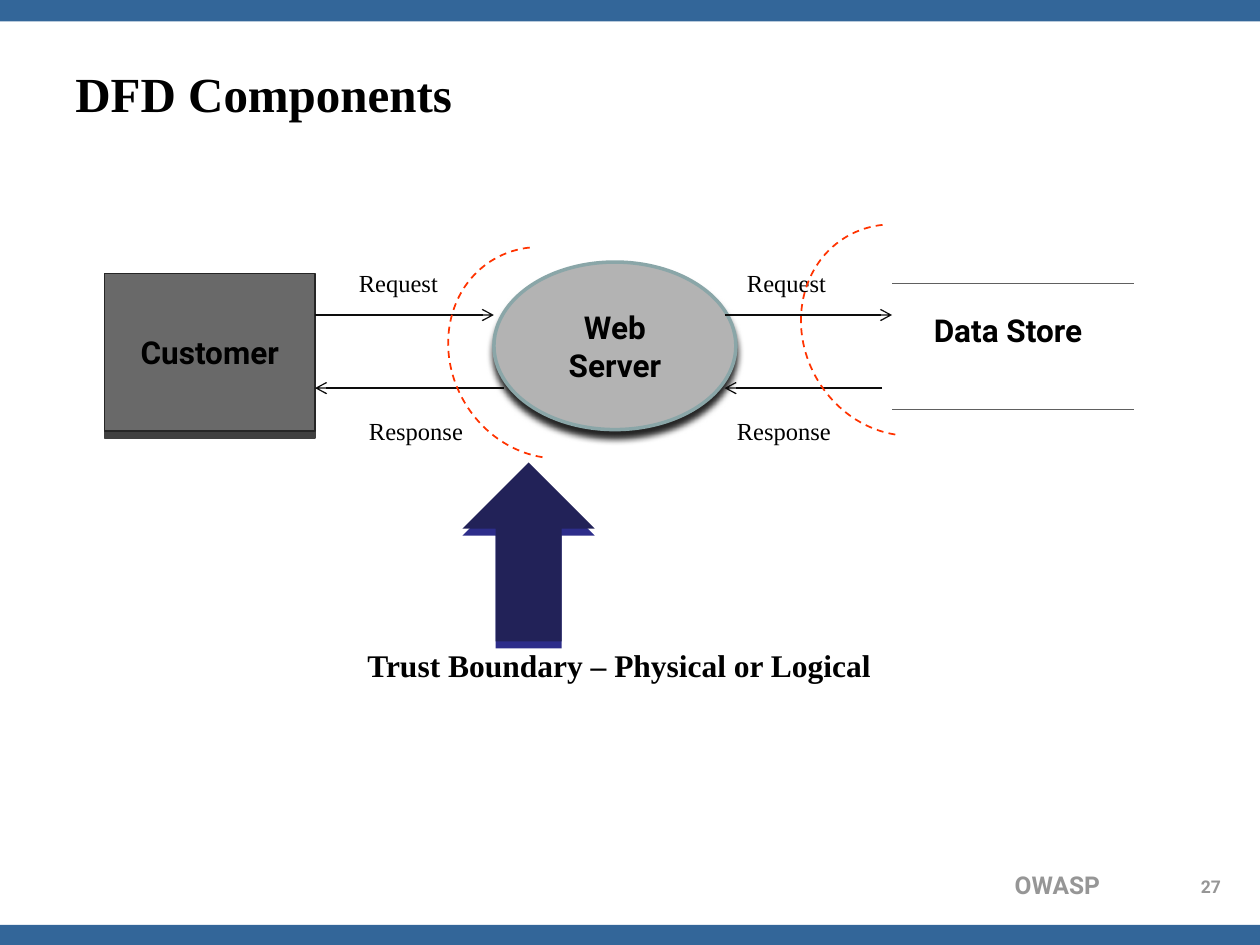
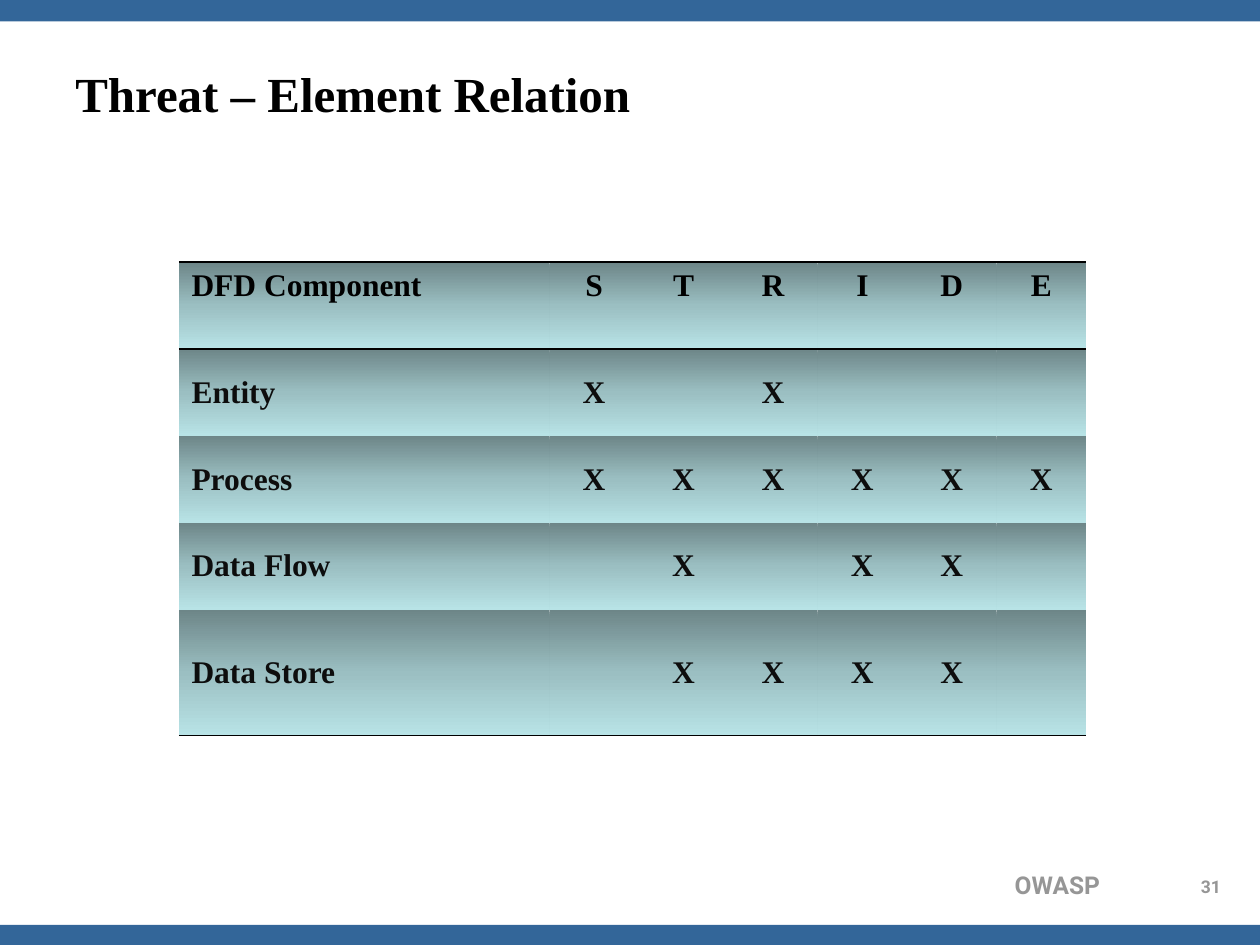
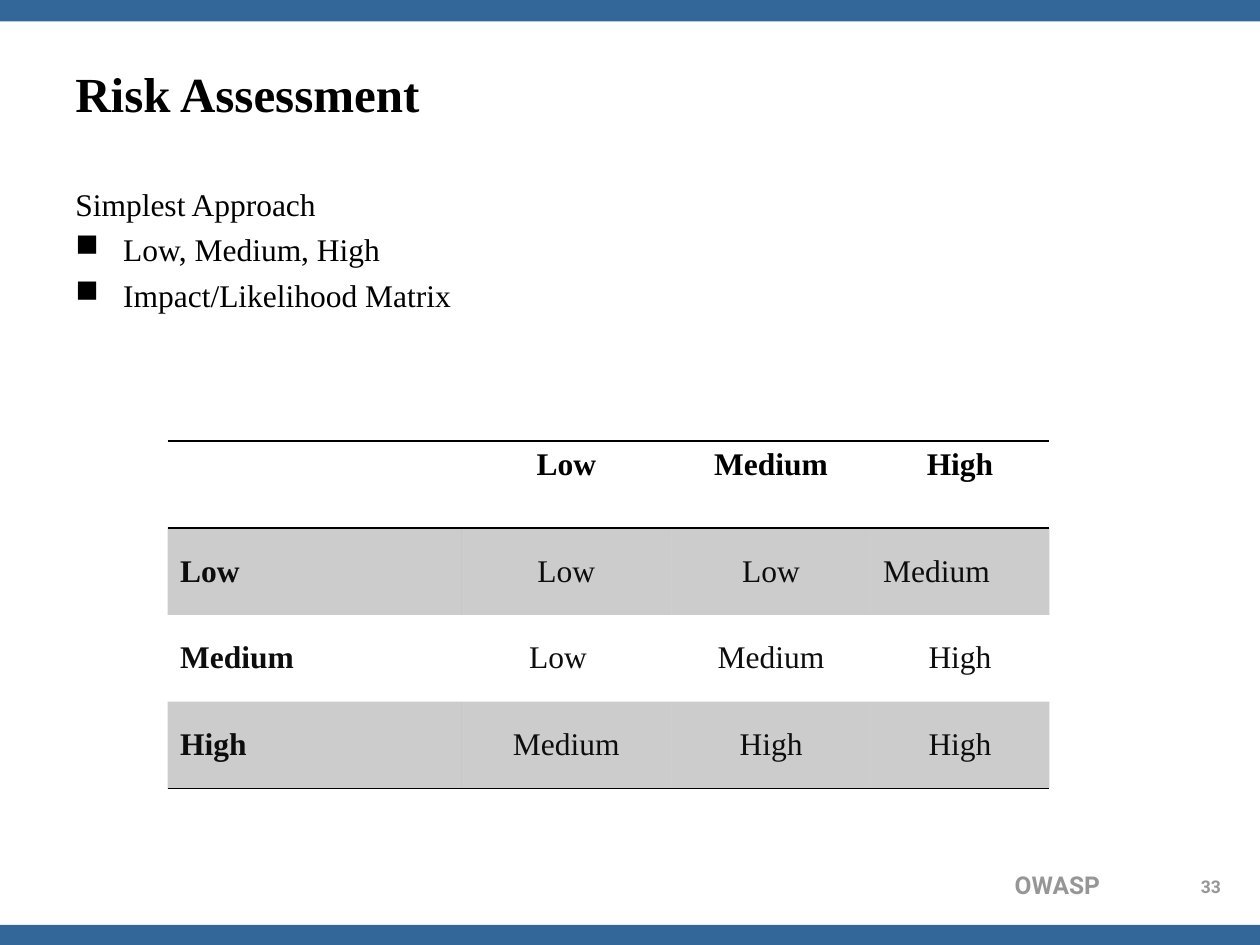
from pptx import Presentation
from pptx.dml.color import RGBColor
from pptx.enum.dml import MSO_LINE
from pptx.enum.shapes import MSO_CONNECTOR, MSO_SHAPE
from pptx.enum.text import MSO_ANCHOR, PP_ALIGN
from pptx.oxml import parse_xml
from pptx.util import Inches, Pt

SERIF, SANS = "Times New Roman", "Roboto"
BLACK = RGBColor(0x00, 0x00, 0x00)
INK = RGBColor(0x0D, 0x0D, 0x0D)
BAND = RGBColor(0x33, 0x66, 0x99)
FOOTER = RGBColor(0x96, 0x96, 0x96)
ENTITY = RGBColor(0x69, 0x69, 0x69)
ENTITY_EDGE = RGBColor(0x26, 0x26, 0x26)
ENTITY_SHADOW = RGBColor(0x40, 0x40, 0x40)
PROCESS = RGBColor(0xB3, 0xB3, 0xB3)
PROCESS_EDGE = RGBColor(0x8A, 0xA6, 0xA8)
STORE_LINE = RGBColor(0x60, 0x60, 0x60)
BOUNDARY = RGBColor(0xFF, 0x33, 0x00)
POINTER = RGBColor(0x22, 0x22, 0x58)
POINTER_SHADOW = RGBColor(0x2D, 0x2D, 0x8A)

LEFT, CENTER, RIGHT = PP_ALIGN.LEFT, PP_ALIGN.CENTER, PP_ALIGN.RIGHT
NS = 'xmlns:a="http://schemas.openxmlformats.org/drawingml/2006/main"'
NO_TABLE_STYLE = "{2D5ABB26-0587-4C30-8999-92F81FD0307C}"
STOPS = ((0, "6D8688"), (50, "9BBFC2"), (100, "B8E3E6"))
GRADIENT = (
    f"<a:gradFill {NS}><a:gsLst>"
    + "".join(f'<a:gs pos="{pos * 1000}"><a:srgbClr val="{color}"/></a:gs>' for pos, color in STOPS)
    + '</a:gsLst><a:lin ang="5400000" scaled="0"/></a:gradFill>'
)
GRAY = f'<a:solidFill {NS}><a:srgbClr val="000000"><a:alpha val="20000"/></a:srgbClr></a:solidFill>'
CLEAR = f"<a:noFill {NS}/>"

# from x, from y, to x, to y
FLOWS = [
    (2.5, 2.5, 3.92, 2.5),
    (4, 3.08, 2.5, 3.08),
    (5.75, 2.5, 7.08, 2.5),
    (7, 3.08, 5.75, 3.08),
]
FLOW_LABELS = [
    ("Request", 2.75, 2.08),
    ("Request", 5.83, 2.08),
    ("Response", 2.83, 3.25),
    ("Response", 5.75, 3.25),
]
BOUNDARIES = [(6.38, 1.76), (3.58, 1.94)]

THREATS = "STRIDE"
ELEMENTS = [("Entity", "SR"), ("Process", "STRIDE"), ("Data Flow", "TID"), ("Data Store", "TRID")]

APPROACH = ["Simplest Approach", "Low, Medium, High", "Impact/Likelihood Matrix"]
RISKS = [
    ["", "Low", "Medium", "High"],
    ["Low", "Low", "Low", "Medium"],
    ["Medium", "Low", "Medium", "High"],
    ["High", "Medium", "High", "High"],
]


def style(p, size, color=BLACK, font=SERIF, bold=False, align=LEFT):
    p.alignment = align
    for r in p.runs:
        f = r.font
        f.size, f.name, f.bold, f.color.rgb = Pt(size), font, bold, color


def add_text(s, content, at, size, anchor=MSO_ANCHOR.TOP, **look):
    tf = s.shapes.add_textbox(*map(Inches, at)).text_frame
    tf.word_wrap = True
    tf.vertical_anchor = anchor
    tf.text = content
    style(tf.paragraphs[0], size, **look)
    return tf


def add_shape(s, kind, at, fill=None, line=None, width=2):
    sp = s.shapes.add_shape(kind, *map(Inches, at))
    sp.shadow.inherit = False
    if fill is None:
        sp.fill.background()
    else:
        sp.fill.solid()
        sp.fill.fore_color.rgb = fill
    if line is None:
        sp.line.fill.background()
    else:
        sp.line.color.rgb = line
        sp.line.width = Pt(width)
    return sp


def drop_shadow(sp, color, blur=0):
    effects = sp._element.spPr.find("{*}effectLst")
    effects.append(parse_xml(
        f'<a:outerShdw {NS} blurRad="{Pt(blur)}" dist="{Pt(4)}" dir="5400000" rotWithShape="0">'
        f'<a:srgbClr val="{color}"/></a:outerShdw>'))


def label_shape(sp, content):
    tf = sp.text_frame
    tf.word_wrap = True
    tf.vertical_anchor = MSO_ANCHOR.MIDDLE
    tf.text = content
    style(tf.paragraphs[0], 18, font=SANS, bold=True, align=CENTER)


def add_line(s, ends, color, arrow=False):
    c = s.shapes.add_connector(MSO_CONNECTOR.STRAIGHT, *map(Inches, ends))
    c.line.color.rgb = color
    c.line.width = Pt(0.75)
    if arrow:
        c.line._get_or_add_ln().append(parse_xml(f'<a:tailEnd {NS} type="arrow"/>'))
    c._element.spPr.append(parse_xml(f"<a:effectLst {NS}/>"))


def add_slide(prs, title, number):
    s = prs.slides.add_slide(prs.slide_layouts[6])
    for top in (0, 7.34):
        add_shape(s, MSO_SHAPE.RECTANGLE, (0, top, 10, 0.17), BAND)
    add_text(s, "OWASP", (6.22, 6.86, 2.61, 0.33), 14, color=FOOTER, font=SANS, bold=True, align=RIGHT)
    add_text(s, str(number), (9.39, 6.9, 0.44, 0.25), 10, color=FOOTER, font=SANS, bold=True, align=CENTER)
    add_text(s, title, (0.5, 0.3, 9, 0.87), 28, anchor=MSO_ANCHOR.MIDDLE, bold=True)
    return s


def add_grid(s, rows, at, widths, heights, fills, bold_body):
    """Table ruled above and below its header row and below its last row."""
    frame = s.shapes.add_table(len(rows), len(widths), *map(Inches, (*at, sum(widths), sum(heights))))
    table = frame.table
    table._tbl.tblPr.find("{*}tableStyleId").text = NO_TABLE_STYLE
    for column, width in zip(table.columns, widths):
        column.width = Inches(width)
    for i, row in enumerate(rows):
        table.rows[i].height = Inches(heights[i])
        edges = {0: ("lnT", "lnB"), len(rows) - 1: ("lnB",)}.get(i, ())
        for j, content in enumerate(row):
            cell = table.cell(i, j)
            cell.vertical_anchor = MSO_ANCHOR.MIDDLE if i else MSO_ANCHOR.TOP
            cell.text = content
            style(cell.text_frame.paragraphs[0], 18, color=INK if i else BLACK,
                  bold=bold_body or i == 0 or j == 0, align=CENTER if j else LEFT)
            tcPr = cell._tc.get_or_add_tcPr()
            for edge in edges:
                tcPr.append(parse_xml(
                    f'<a:{edge} {NS} w="{Pt(1)}"><a:solidFill><a:srgbClr val="{BLACK}"/></a:solidFill></a:{edge}>'))
            tcPr.append(parse_xml(fills[i]))
    return table


def build_components(prs):
    s = add_slide(prs, "DFD Components", 27)
    customer = add_shape(s, MSO_SHAPE.RECTANGLE, (0.83, 2.17, 1.67, 1.25), ENTITY, ENTITY_EDGE, 1)
    drop_shadow(customer, ENTITY_SHADOW)
    label_shape(customer, "Customer")
    server = add_shape(s, MSO_SHAPE.OVAL, (3.92, 2.08, 1.92, 1.33), PROCESS, PROCESS_EDGE)
    drop_shadow(server, ENTITY_EDGE, blur=4)
    label_shape(server, "Web Server")

    for y in (2.25, 3.25):
        add_line(s, (7.08, y, 9, y), STORE_LINE)
    add_text(s, "Data Store", (7, 2.42, 2, 0.4), 18, font=SANS, bold=True, align=CENTER)

    for ends in FLOWS:
        add_line(s, ends, INK, arrow=True)
    for label, x, y in FLOW_LABELS:
        add_text(s, label, (x, y, 1.17, 0.34), 14)
    for x, y in BOUNDARIES:
        arc = add_shape(s, MSO_SHAPE.ARC, (x, y, 1.55, 1.72), line=BOUNDARY, width=1)
        arc.line.dash_style = MSO_LINE.DASH
        arc.adjustments[0], arc.adjustments[1] = 74.27, 174.63
        arc.rotation = 329.6

    add_text(s, "Trust Boundary – Physical or Logical", (0.83, 5.08, 8.17, 0.4), 18, bold=True, align=CENTER)
    pointer = add_shape(s, MSO_SHAPE.DOWN_ARROW, (3.67, 3.67, 1.05, 1.42), POINTER)
    pointer.rotation = 180
    drop_shadow(pointer, POINTER_SHADOW)


def build_threats(prs):
    s = add_slide(prs, "Threat – Element Relation", 31)
    rows = [["DFD Component", *THREATS]]
    rows += [[name, *("X" if t in found else "" for t in THREATS)] for name, found in ELEMENTS]
    add_grid(s, rows, (1.42, 2.08), [2.94] + [0.71] * len(THREATS), [0.69] * 4 + [1],
             [GRADIENT] * len(rows), bold_body=True)


def build_risks(prs):
    s = add_slide(prs, "Risk Assessment", 33)
    tf = add_text(s, APPROACH[0], (0.5, 1.42, 9, 1.3), 18)
    for item in APPROACH[1:]:
        p = tf.add_paragraph()
        p.text = item
        p.space_before = Pt(4.3)
        p._p.get_or_add_pPr().append(parse_xml(f'<a:buChar {NS} char="■"/>'))
        style(p, 18)
    for p in tf.paragraphs:
        pPr = p._p.get_or_add_pPr()
        pPr.set("marL", str(Inches(0.38)))
        pPr.set("indent", str(-Inches(0.38)))

    table = add_grid(s, RISKS, (1.33, 3.5), [2.33, 1.67, 1.58, 1.42], [0.69] * 4,
                     [CLEAR, GRAY, CLEAR, GRAY], bold_body=False)
    for i, j, margin in ((1, 3, 0.1), (2, 1, 0.54)):
        cell = table.cell(i, j)
        cell.margin_left = Inches(margin)
        cell.text_frame.paragraphs[0].alignment = LEFT


def main():
    prs = Presentation()
    prs.slide_width, prs.slide_height = Inches(10), Inches(7.5)
    build_components(prs)
    build_threats(prs)
    build_risks(prs)
    prs.save("out.pptx")


if __name__ == "__main__":
    main()
